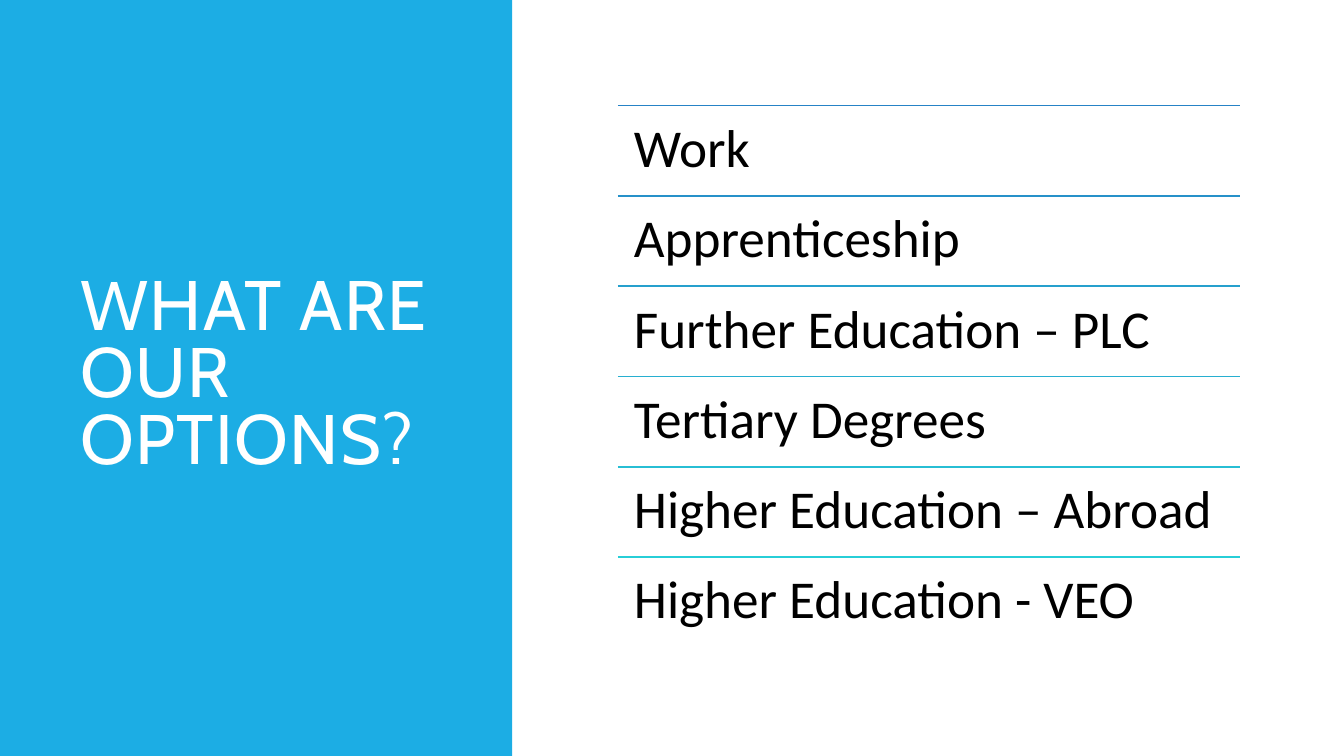
from lxml.etree import SubElement
from pptx import Presentation
from pptx.dml.color import RGBColor
from pptx.enum.shapes import MSO_CONNECTOR, MSO_SHAPE
from pptx.enum.text import MSO_ANCHOR
from pptx.oxml.ns import qn
from pptx.util import Pt

WHITE = RGBColor(0xFF, 0xFF, 0xFF)
BLACK = RGBColor(0, 0, 0)
BLUE = RGBColor(0x1C, 0xAD, 0xE4)

OPTIONS = [
    ("Work", RGBColor(0x26, 0x83, 0xC6)),
    ("Apprenticeship", RGBColor(0x26, 0x91, 0xC9)),
    ("Further Education – PLC", RGBColor(0x26, 0xA0, 0xCD)),
    ("Tertiary Degrees", RGBColor(0x27, 0xAF, 0xD0)),
    ("Higher Education – Abroad", RGBColor(0x27, 0xBE, 0xD4)),
    ("Higher Education - VEO", RGBColor(0x27, 0xCE, 0xD7)),
]
LEFT, TOP, WIDTH, STEP = 441.4, 75.4, 444.2, 64.5


class Painter:
    title = {"name": "Cabin", "size": Pt(50), "color": WHITE}
    body = {"name": "Calibri", "size": Pt(38), "color": BLACK}
    weight = Pt(1.25)

    def __init__(self, slide):
        self.shapes = slide.shapes

    def panel(self, x, y, w, h, color):
        box = self.shapes.add_shape(MSO_SHAPE.RECTANGLE, Pt(x), Pt(y), Pt(w), Pt(h))
        box.shadow.inherit = False
        box.fill.solid()
        box.fill.fore_color.rgb = color
        box.line.fill.background()

    def rule(self, x, y, w, color):
        line = self.shapes.add_connector(
            MSO_CONNECTOR.STRAIGHT, Pt(x), Pt(y), Pt(x + w), Pt(y))
        line.line.color.rgb = color
        line.line.width = self.weight
        SubElement(line._element.spPr, qn("a:effectLst"))

    def text(self, words, x, y, w, h, style, frame, spacing, track=0):
        """Add a text box; track is the letter spacing in points."""
        box = self.shapes.add_textbox(Pt(x), Pt(y), Pt(w), Pt(h)).text_frame
        for key, value in {"word_wrap": True, **frame}.items():
            setattr(box, key, value)
        para = box.paragraphs[0]
        para.line_spacing = spacing
        run = para.add_run()
        run.text = words
        for key, value in style.items():
            if key == "color":
                run.font.color.rgb = value
            else:
                setattr(run.font, key, value)
        if track:
            run._r.get_or_add_rPr().set("spc", str(track * 100))


def main():
    deck = Presentation()
    deck.slide_width, deck.slide_height = Pt(960), Pt(540)
    draw = Painter(deck.slides.add_slide(deck.slide_layouts[6]))

    draw.panel(0, 0, 365.8, 540, BLUE)
    draw.text("WHAT ARE OUR OPTIONS?", 50.4, 50.4, 269.3, 438.5, draw.title,
              {"vertical_anchor": MSO_ANCHOR.MIDDLE}, 0.8, track=1)

    sides = ("left", "top", "right", "bottom")
    inset = {f"margin_{side}": Pt(11.4) for side in sides}
    for row, (words, color) in enumerate(OPTIONS):
        y = TOP + row * STEP
        draw.rule(LEFT, y, WIDTH, color)
        draw.text(words, LEFT, y, WIDTH, STEP, draw.body, inset, 0.9)

    deck.save("out.pptx")


if __name__ == "__main__":
    main()
